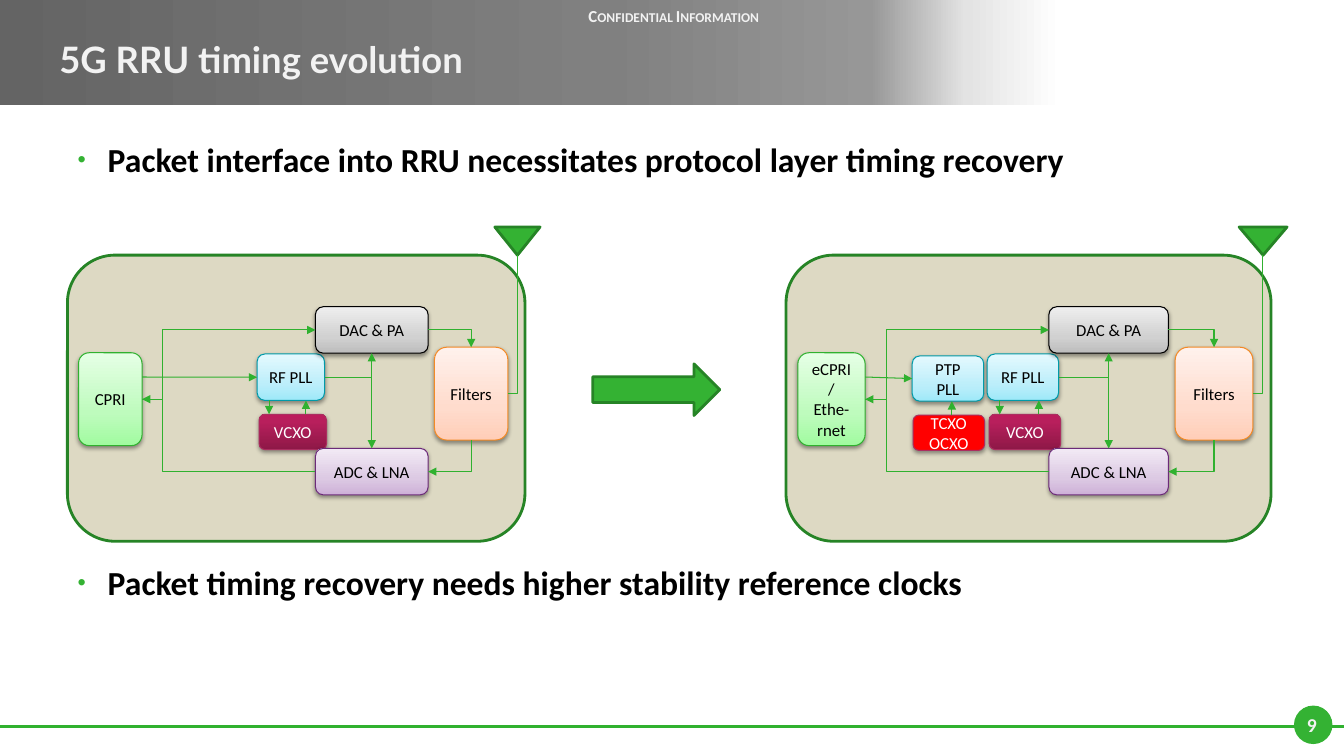
from pptx import Presentation
from pptx.dml.color import RGBColor
from pptx.enum.shapes import MSO_CONNECTOR, MSO_SHAPE
from pptx.enum.text import MSO_ANCHOR, MSO_AUTO_SIZE, PP_ALIGN
from pptx.oxml.ns import qn
from pptx.util import Cm, Pt
from lxml.etree import SubElement

COLORS = {
    "green": "34B233", "wire": "30B12F", "edge": "268426", "tan": "DDD9C3",
    "white": "FFFFFF", "pale": "F2F2F2", "black": "000000", "red": "FF0000",
    "teal": "009AA9", "berry": "AB2E60", "purple": "6C2A79", "orange": "F28A26",
}
UP = 90
GRADIENTS = {
    "header": [(0, "646464"), (57, "808080"), (82, "979797"), (91, "E3E3E3"), (100, "FFFFFF")],
    "mint": [(0, "A1FBA0"), (35, "BEFBBD"), (100, "E5FFE5")],
    "sky": [(0, "9EE9F9"), (35, "BCEEFA"), (100, "E4F9FE")],
    "wine": [(0, "8E1847"), (80, "B81F5C"), (100, "BC1C5C")],
    "gray": [(0, "BDBDBD"), (35, "D1D1D1"), (100, "EEEEEE")],
    "lilac": [(0, "CEB1D8"), (35, "DCC9E3"), (100, "F2EAF5")],
    "peach": [(0, "FFCEB8"), (35, "FFDCCD"), (100, "FFF1EC")],
}


def color(name):
    return RGBColor.from_string(COLORS[name])


def middle(box):
    return box.top + box.height // 2


def center(box):
    return box.left + box.width // 2


def right(box):
    return box.left + box.width


def bottom(box):
    return box.top + box.height


class Sheet:
    """Holds the style and the slide being drawn."""

    font = "Calibri"

    def __init__(self, deck):
        self.page = deck.slides.add_slide(deck.slide_layouts[1])
        self.shapes = self.page.shapes

    def set_text(self, frame, text, size=12, ink="black", bold=False, font=None,
                 align=PP_ALIGN.CENTER, anchor=MSO_ANCHOR.MIDDLE, wrap=True, small_caps=False):
        frame.auto_size = MSO_AUTO_SIZE.NONE
        frame.word_wrap = wrap
        frame.vertical_anchor = anchor
        for index, line in enumerate(text.split("\n")):
            para = frame.paragraphs[0] if index == 0 else frame.add_paragraph()
            para.alignment = align
            span = para.add_run()
            span.text = line
            span.font.name = font or self.font
            span.font.size = Pt(size)
            span.font.bold = bold
            span.font.color.rgb = color(ink)
            if small_caps:
                span._r.get_or_add_rPr().set("cap", "small")

    def place(self, holder, left, top, width, height):
        holder.left, holder.top = Cm(left), Cm(top)
        holder.width, holder.height = Cm(width), Cm(height)
        self.shapes.element.append(holder.element)

    def title(self, text, *area):
        holder = self.shapes.title
        self.place(holder, *area)
        self.set_text(holder.text_frame, text, size=26, ink="pale", bold=True,
                      font="Lato", align=PP_ALIGN.LEFT)

    def bullets(self, lines, gap, *area):
        holder = self.page.placeholders[1]
        self.place(holder, *area)
        self.set_text(holder.text_frame, "\n".join(lines), size=24, bold=True,
                      align=PP_ALIGN.LEFT, anchor=MSO_ANCHOR.TOP)
        for index, para in enumerate(holder.text_frame.paragraphs):
            para.space_before = Pt(gap if index else 0)
            properties = para._p.get_or_add_pPr()
            properties.set("marL", str(Cm(0.76)))
            properties.set("indent", str(-Cm(0.76)))
            tint = SubElement(properties, qn("a:buClr"))
            SubElement(tint, qn("a:srgbClr"), val=COLORS["green"])
            SubElement(properties, qn("a:buSzPct"), val="70000")
            SubElement(properties, qn("a:buFont"), typeface="Arial")
            SubElement(properties, qn("a:buChar"), char="•")

    def label(self, text, left, top, width, height, **style):
        box = self.shapes.add_textbox(Cm(left), Cm(top), Cm(width), Cm(height))
        self.set_text(box.text_frame, text, **style)

    def shape(self, kind, left, top, width, height, fill, edge=None, weight=2, angle=UP):
        box = self.shapes.add_shape(kind, Cm(left), Cm(top), Cm(width), Cm(height))
        box.shadow.inherit = False
        if fill in GRADIENTS:
            box.fill.gradient()
            box.fill.gradient_angle = angle
            stops = box.element.spPr.find(qn("a:gradFill")).find(qn("a:gsLst"))
            stops.clear()
            for position, shade in GRADIENTS[fill]:
                stop = SubElement(stops, qn("a:gs"), pos=str(position * 1000))
                SubElement(stop, qn("a:srgbClr"), val=shade)
        else:
            box.fill.solid()
            box.fill.fore_color.rgb = color(fill)
        if edge:
            box.line.color.rgb = color(edge)
            box.line.width = Pt(weight)
        else:
            box.line.fill.background()
        return box

    def block(self, text, *area, fill, edge, ink="black", wrap=False):
        """Draw a labelled circuit block with a soft shadow."""
        box = self.shape(MSO_SHAPE.ROUNDED_RECTANGLE, *area, fill, edge, weight=0.75)
        effects = box.element.spPr.find(qn("a:effectLst"))
        shadow = SubElement(effects, qn("a:outerShdw"), blurRad=str(Pt(3.1)),
                            dist=str(Pt(1.6)), dir="5400000", rotWithShape="0")
        shade = SubElement(shadow, qn("a:srgbClr"), val=COLORS["black"])
        SubElement(shade, qn("a:alpha"), val="38000")
        self.set_text(box.text_frame, text, ink=ink, wrap=wrap)
        return box

    def wire(self, x1, y1, x2, y2, arrow="tailEnd", weight=0.75, bend=None):
        """Draw a line; bend is "corner" or the fraction of the width where it turns."""
        kind = MSO_CONNECTOR.ELBOW if bend else MSO_CONNECTOR.STRAIGHT
        line = self.shapes.add_connector(kind, x1, y1, x2, y2)
        line.line.color.rgb = color("wire")
        line.line.width = Pt(weight)
        properties = line.element.spPr
        geometry = properties.find(qn("a:prstGeom"))
        if bend == "corner":
            geometry.set("prst", "bentConnector2")
        elif bend:
            SubElement(geometry.find(qn("a:avLst")), qn("a:gd"), name="adj1",
                       fmla=f"val {round(bend * 100000)}")
        if arrow:
            SubElement(properties.find(qn("a:ln")), qn(f"a:{arrow}"), type="triangle")
        SubElement(properties, qn("a:effectLst"))
        return line


def draw_radio(sheet, left, stretch, interface, packet=False):
    """Draw one radio unit, widened by stretch; packet adds the PTP clock."""

    def area(x, top, width, height):
        return left + x * stretch, top, width * stretch, height

    antenna = sheet.shape(MSO_SHAPE.ISOSCELES_TRIANGLE, *area(10.77, 5.72, 1.14, 0.71),
                          "green", "edge")
    antenna.rotation = 180
    sheet.shape(MSO_SHAPE.ROUNDED_RECTANGLE, *area(0, 6.43, 11.53, 7.21), "tan", "edge")
    port = sheet.block(interface, *area(0.28, 8.89, 1.6, 2.34),
                       fill="mint", edge="wire", wrap=packet)
    pll = sheet.block("RF PLL", *area(4.78, 8.92, 1.7, 1.17), fill="sky", edge="teal")
    vcxo = sheet.block("VCXO", *area(4.83, 10.44, 1.7, 0.89),
                       fill="wine", edge="berry", ink="white")
    dac = sheet.block("DAC & PA", *area(6.25, 7.73, 2.84, 1.17), fill="gray", edge="black")
    adc = sheet.block("ADC & LNA", *area(6.25, 11.3, 2.84, 1.17), fill="lilac", edge="purple")
    filters = sheet.block("Filters", *area(9.25, 8.75, 1.85, 2.34), fill="peach", edge="orange")
    clock = pll
    if packet:
        clock = sheet.block("PTP PLL", *area(3, 8.97, 1.7, 1.14),
                            fill="sky", edge="teal", wrap=True)
        oscillator = sheet.block("TCXO\nOCXO", *area(3.02, 10.46, 1.7, 0.89),
                                 fill="red", edge="berry", ink="white")
        rise = clock.left + Cm(1)
        sheet.wire(rise, oscillator.top, rise, bottom(clock))

    feed = sheet.wire(right(port), Cm(9.5), clock.left, middle(clock))
    feed.end_connect(clock, 1)
    down, up = pll.left + Cm(0.3 * stretch), pll.left + Cm(1.23 * stretch)
    sheet.wire(down, bottom(pll), down, vcxo.top)
    sheet.wire(up, vcxo.top, up, bottom(pll))
    for converter, arrow in ((dac, "tailEnd"), (adc, "headEnd")):
        sheet.wire(right(port), middle(port), converter.left, middle(converter),
                   arrow=arrow, bend=0.117)
    for converter, near, far, arrow in ((dac, bottom(dac), filters.top, "tailEnd"),
                                        (adc, adc.top, bottom(filters), "headEnd")):
        sheet.wire(right(pll), middle(pll), center(converter), near, bend="corner")
        sheet.wire(right(converter), middle(converter), center(filters), far,
                   arrow=arrow, bend="corner")
    sheet.wire(right(filters), middle(filters), center(antenna), bottom(antenna),
               arrow=None, bend="corner")


def main():
    deck = Presentation()
    deck.slide_width, deck.slide_height = Cm(33.87), Cm(19.05)
    sheet = Sheet(deck)
    sheet.wire(0, Cm(18.31), Cm(33.87), Cm(18.31), arrow=None, weight=2.5)
    sheet.shape(MSO_SHAPE.OVAL, 32.61, 17.78, 0.97, 0.97, "green")
    sheet.label("9", 32.26, 17.75, 1.6, 1.02, size=14, ink="pale", bold=True)
    sheet.shape(MSO_SHAPE.RECTANGLE, 0, 0, 26.75, 2.64, "header", angle=0)
    sheet.bullets(["Packet interface into RRU necessitates protocol layer timing recovery",
                   "Packet timing recovery needs higher stability reference clocks"],
                  273, 1.7, 3.38, 30.48, 13.64)
    sheet.title("5G RRU timing evolution", 1.24, 0.53, 23.01, 1.91)
    sheet.label("Confidential Information", 13.92, 0, 6.12, 0.81,
                ink="pale", bold=True, small_caps=True)
    draw_radio(sheet, 1.7, 1, "CPRI")
    draw_radio(sheet, 19.81, 1.06, "eCPRI/Ethe-rnet", packet=True)
    sheet.shape(MSO_SHAPE.RIGHT_ARROW, 14.94, 9.17, 3.2, 1.3, "green", "edge")
    deck.save("out.pptx")


if __name__ == "__main__":
    main()
